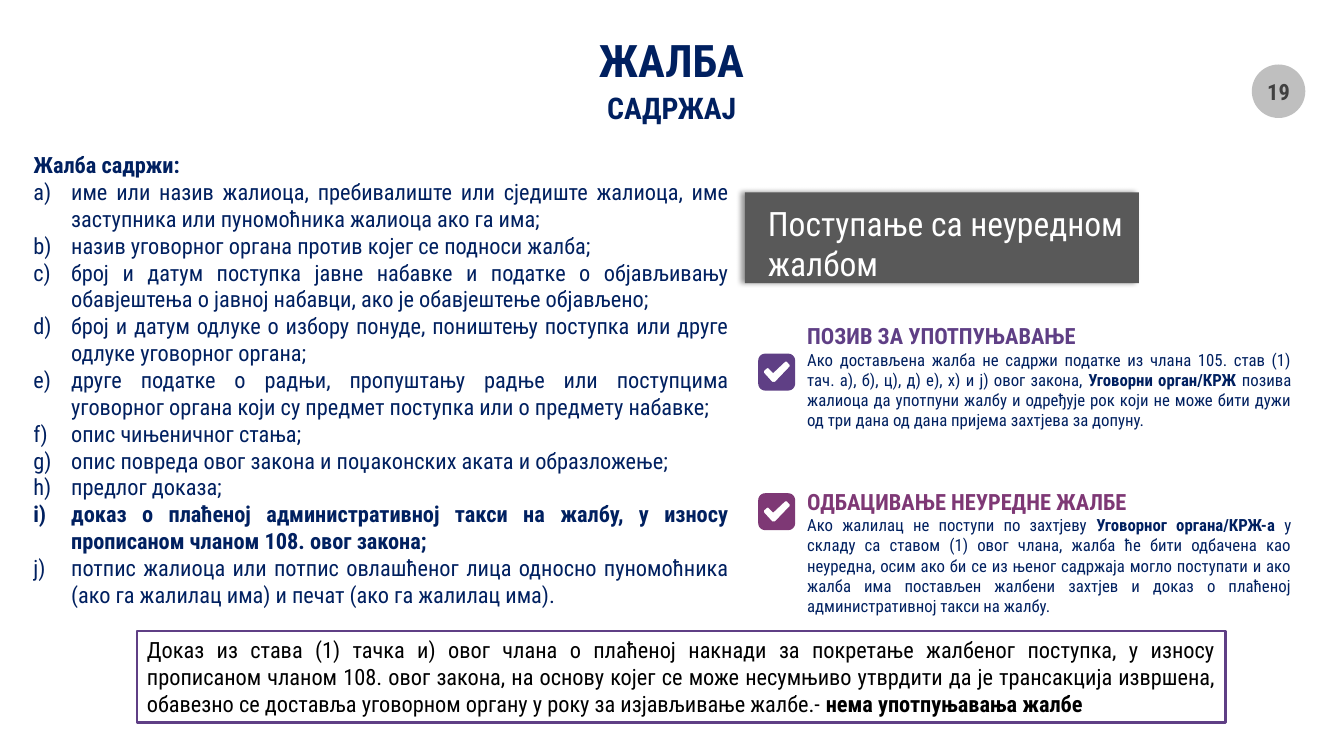
from math import cos, pi, sin

from lxml import etree
from pptx import Presentation
from pptx.dml.color import RGBColor
from pptx.enum.shapes import MSO_SHAPE
from pptx.enum.text import MSO_ANCHOR, MSO_AUTO_SIZE, PP_ALIGN
from pptx.oxml.ns import qn
from pptx.util import Pt

RECT, OVAL = MSO_SHAPE.RECTANGLE, MSO_SHAPE.OVAL
LEFT, CENTER, JUST = PP_ALIGN.LEFT, PP_ALIGN.CENTER, PP_ALIGN.JUSTIFY
TOP, MIDDLE = MSO_ANCHOR.TOP, MSO_ANCHOR.MIDDLE
FIT, FIXED = MSO_AUTO_SIZE.SHAPE_TO_FIT_TEXT, MSO_AUTO_SIZE.NONE

FONT = "Roboto Condensed"
COLORS = {
    "navy": "002060", "violet": "5F3F85", "plum": "7E3875", "gray": "595959",
    "silver": "BFBFBF", "dark": "404040", "white": "FFFFFF", "black": "000000",
}

# An asterisk switches bold on or off.
ITEMS = [
    "име или назив жалиоца, пребивалиште или сједиште жалиоца, име заступника или пуномоћника жалиоца ако га има;",
    "назив уговорног органа против којег се подноси жалба;",
    "број и датум поступка јавне набавке и податке о објављивању обавјештења о јавној набавци, ако је обавјештење објављено;",
    "број и датум одлуке о избору понуде, поништењу поступка или друге одлуке уговорног органа;",
    "друге податке о радњи, пропуштању радње или поступцима уговорног органа који су предмет поступка или о предмету набавке;",
    "опис чињеничног стања;",
    "опис повреда овог закона и поџаконских аката и образложење;",
    "предлог доказа;",
    "*доказ о плаћеној административној такси на жалбу, у износу прописаном чланом 108. овог закона;",
    "потпис жалиоца или потпис овлашћеног лица односно пуномоћника (ако га жалилац има) и печат (ако га жалилац има).",
]
CALL = (
    "Ако достављена жалба не садржи податке из члана 105. став (1) тач. а), б), ц), д) е), х) и ј) овог закона, "
    "*Уговорни орган/КРЖ *позива жалиоца да употпуни жалбу и одређује рок који не може бити дужи "
    "од три дана од дана пријема захтјева за допуну."
)
REJECT = (
    "Ако жалилац не поступи по захтјеву *Уговорног органа/КРЖ-а *у складу са ставом (1) овог члана, "
    "жалба ће бити одбачена као неуредна, осим ако би се из њеног садржаја могло поступати и ако "
    "жалба има постављен жалбени захтјев и доказ о плаћеној административној такси на жалбу."
)
PROOF = (
    "Доказ из става (1) тачка и) овог члана о плаћеној накнади за покретање жалбеног поступка, у износу "
    "прописаном чланом 108. овог закона, на основу којег се може несумњиво утврдити да је трансакција извршена, "
    "обавезно се доставља уговорном органу у року за изјављивање жалбе.- *нема употпуњавања жалбе"
)
TICK = [
    (22.5, 9.2), (22.5, 8), (20.5, 5.8), (19.2, 5.8), (10.7, 13.8), (7.2, 10.4),
    (6.3, 10.4), (4, 12.4), (4, 13.6), (10, 20.2), (12, 20.2),
]


def rgb(name):
    return RGBColor.from_string(COLORS[name])


def place(shape, x, y, w, h):
    shape.left, shape.top, shape.width, shape.height = Pt(x), Pt(y), Pt(w), Pt(h)


def write(para, text, size, color, align):
    """Fill a paragraph, with bold between asterisks."""
    para.alignment = align
    para.space_before = Pt(0)
    for i, part in enumerate(text.split("*")):
        if part:
            run = para.add_run()
            run.text = part
            font = run.font
            font.name, font.size, font.bold = FONT, Pt(size), i % 2 == 1
            font.color.rgb = rgb(color)


def setup(frame, fit=FIXED, wrap=True, anchor=TOP, inset=True):
    frame.word_wrap, frame.auto_size = wrap, fit
    frame.vertical_anchor = anchor
    frame.margin_left = frame.margin_right = Pt(7.2 if inset else 0)
    frame.margin_top = frame.margin_bottom = Pt(3.6 if inset else 0)


def mark(para, kind, indent=0):
    """Set the hanging indent and the kind of bullet."""
    props = para._p.get_or_add_pPr()
    props.set("marL", str(Pt(indent)))
    props.set("indent", str(-Pt(indent)))
    return etree.SubElement(props, qn(kind))


def add_text(slide, box, text, size, color, align=LEFT, wrap=True):
    shape = slide.shapes.add_textbox(*map(Pt, box))
    setup(shape.text_frame, FIT, wrap)
    write(shape.text_frame.paragraphs[0], text, size, color, align)


def add_block(slide, kind, box, fill, line=None):
    shape = slide.shapes.add_shape(kind, *map(Pt, box))
    shape.shadow.inherit = False
    shape.fill.solid()
    shape.fill.fore_color.rgb = rgb(fill)
    if line:
        shape.line.color.rgb = rgb(line)
        shape.line.width = Pt(2)
    else:
        shape.line.fill.background()
    return shape


def cast(shape):
    """Cast a soft shadow to the left."""
    effects = shape._element.spPr.find(qn("a:effectLst"))
    shade = etree.SubElement(effects, qn("a:outerShdw"), blurRad=str(Pt(4)),
                             dist=str(Pt(3)), dir="10800000", rotWithShape="0")
    tone = etree.SubElement(shade, qn("a:srgbClr"), val=COLORS["black"])
    etree.SubElement(tone, qn("a:alpha"), val="40000")


def add_check(slide, x, y, color, side=26.4, r=5):
    """Draw a rounded square with a tick cut out of it."""
    far = side - r
    edge = []
    for i, (cx, cy) in enumerate([(far, far), (r, far), (r, r), (far, r)]):
        for step in range(7):
            turn = (i + step / 6) * pi / 2
            edge.append((cx + r * cos(turn), cy + r * sin(turn)))
    edge, tick = ([(Pt(x + a), Pt(y + b)) for a, b in dots] for dots in (edge, TICK))
    path = slide.shapes.build_freeform(*edge[0])
    path.add_line_segments(edge[1:])
    path.move_to(*tick[0])
    path.add_line_segments(tick[1:])
    shape = path.convert_to_shape()
    shape.shadow.inherit = False
    shape.fill.solid()
    shape.fill.fore_color.rgb = rgb(color)
    shape.line.fill.background()


def add_head(slide, holder, box, text, size, wrap):
    place(holder, *box)
    setup(holder.text_frame, wrap=wrap, anchor=MIDDLE, inset=False)
    para = holder.text_frame.paragraphs[0]
    write(para, "*" + text, size, "navy", CENTER)
    mark(para, "a:buNone")


def add_list(holder):
    place(holder, 16.6, 104.4, 511.2, 337)
    frame = holder.text_frame
    setup(frame)
    write(frame.paragraphs[0], "*Жалба садржи:", 16, "navy", JUST)
    mark(frame.paragraphs[0], "a:buNone")
    for item in ITEMS:
        para = frame.add_paragraph()
        write(para, item, 16, "navy", JUST)
        mark(para, "a:buAutoNum", 27).set("type", "alphaLcParenR")


def add_step(slide, y, color, head, width, body, height, icon):
    add_check(slide, 541.6, icon, color)
    add_text(slide, (569.5, y + 19.4, 360, height), body, 12, "navy", JUST)
    add_text(slide, (569.5, y, width, 26.6), "*" + head, 16, color, wrap=False)


def main():
    deck = Presentation()
    deck.slide_width, deck.slide_height = Pt(960), Pt(540)
    slide = deck.slides.add_slide(deck.slide_layouts[3])
    title, sub, items = slide.placeholders

    badge = add_block(slide, OVAL, (894.2, 46.1, 38.2, 38.2), "silver")
    setup(badge.text_frame, wrap=False, anchor=MIDDLE, inset=False)
    write(badge.text_frame.paragraphs[0], "*19", 16, "dark", CENTER)

    add_head(slide, title, (229.7, 20.9, 499.7, 43.9), "ЖАЛБА", 32, False)
    add_head(slide, sub, (343.4, 66.2, 272.9, 20.9), "САДРЖАЈ", 21.3, True)
    add_list(items)

    cast(add_block(slide, RECT, (532.1, 137.5, 281.5, 64.8), "gray"))
    add_text(slide, (541.4, 141.1, 281.5, 65.5), "Поступање са неуредном жалбом", 24, "white")
    add_step(slide, 226.8, "violet", "ПОЗИВ ЗА УПОТПУЊАВАЊЕ", 209.5, CALL, 65.5, 252.6)
    add_step(slide, 344.9, "plum", "ОДБАЦИВАЊЕ НЕУРЕДНЕ ЖАЛБЕ", 245.5, REJECT, 79.9, 352.3)

    proof = add_block(slide, RECT, (97.9, 450.7, 777.6, 65.5), "white", "violet")
    setup(proof.text_frame, FIT)
    write(proof.text_frame.paragraphs[0], PROOF, 16, "black", JUST)
    deck.save("out.pptx")


if __name__ == "__main__":
    main()
